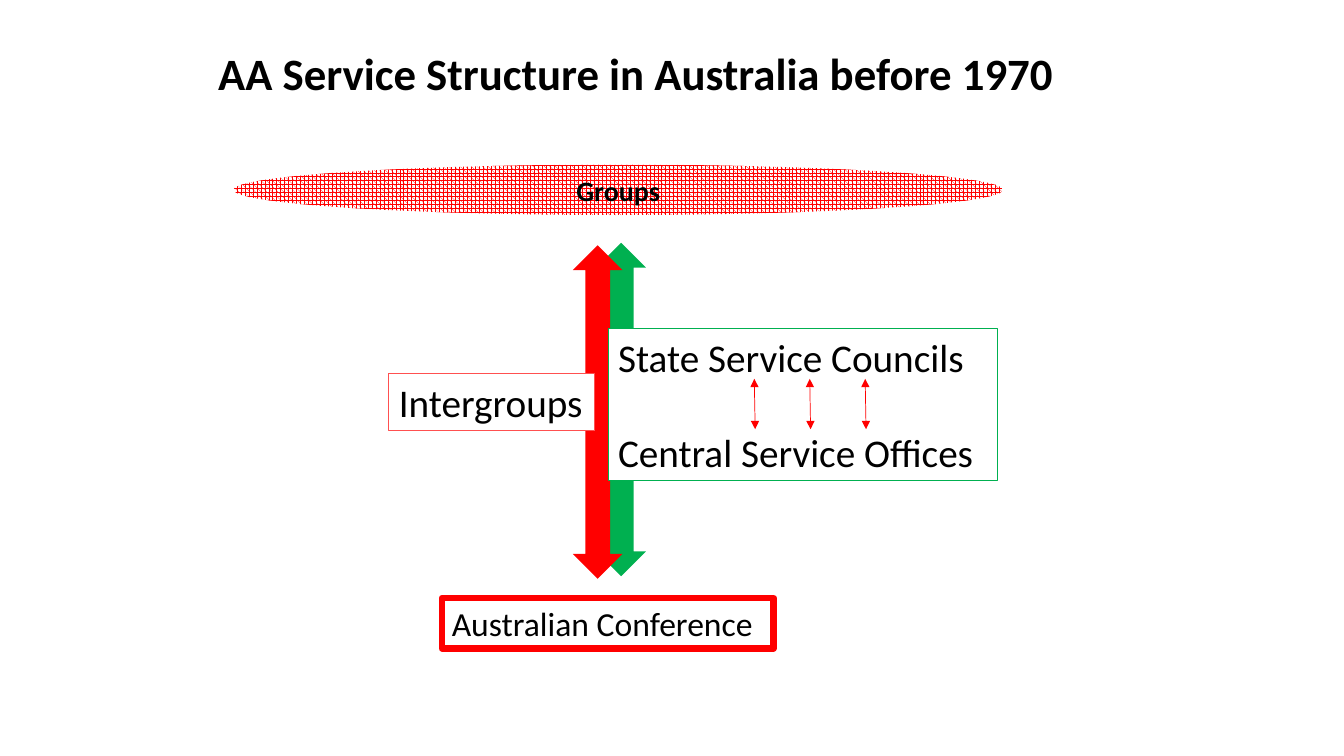
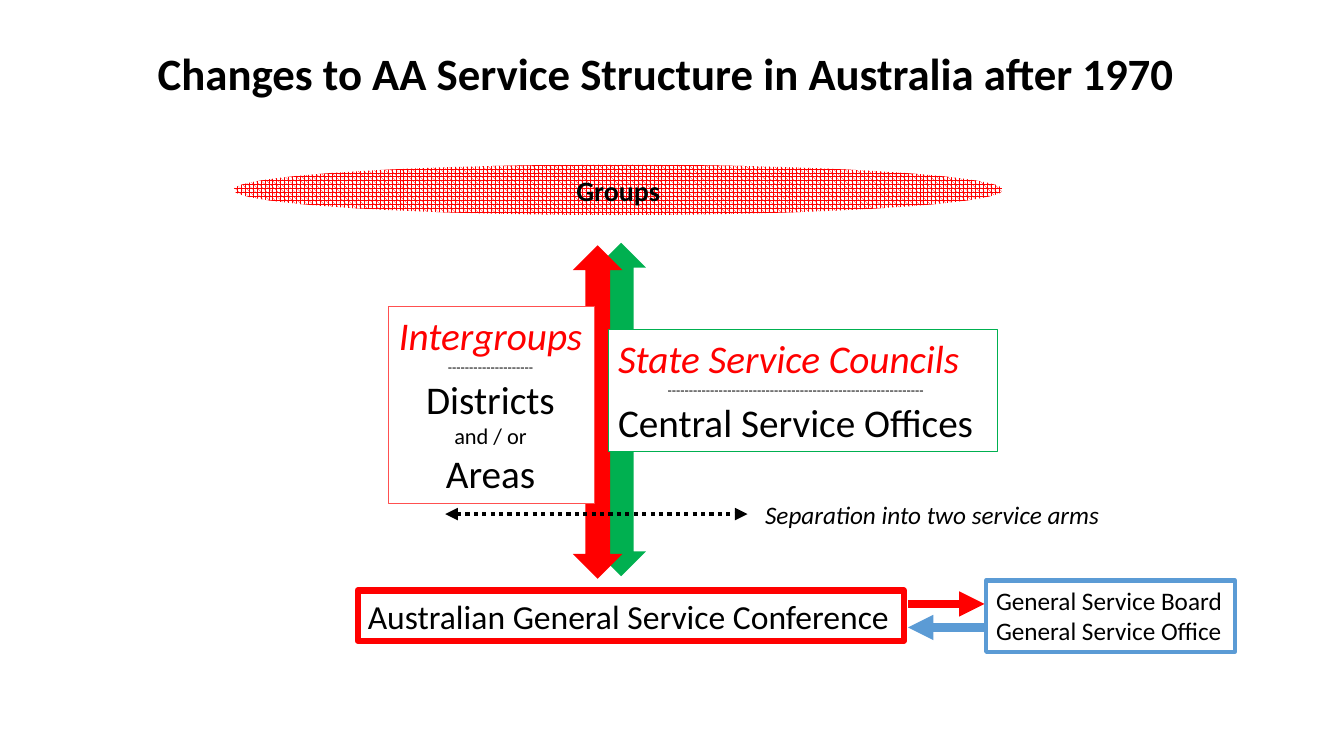
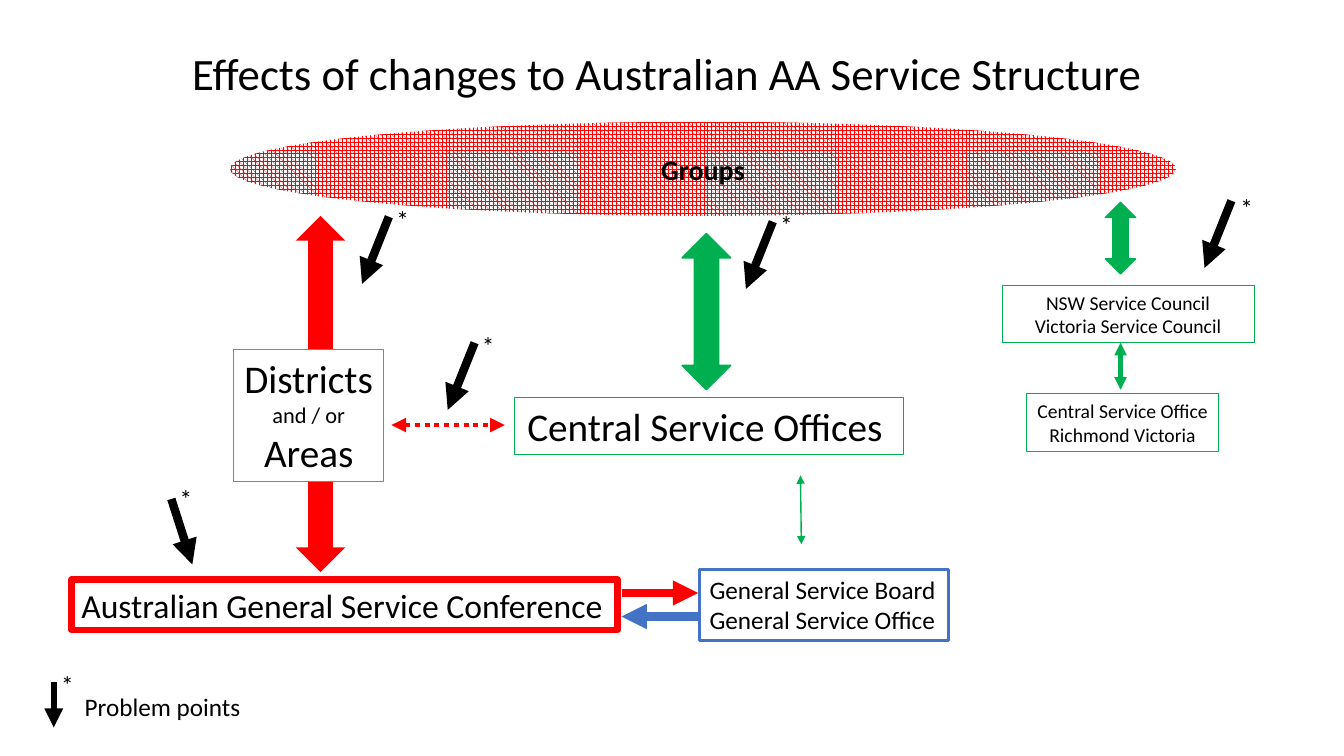
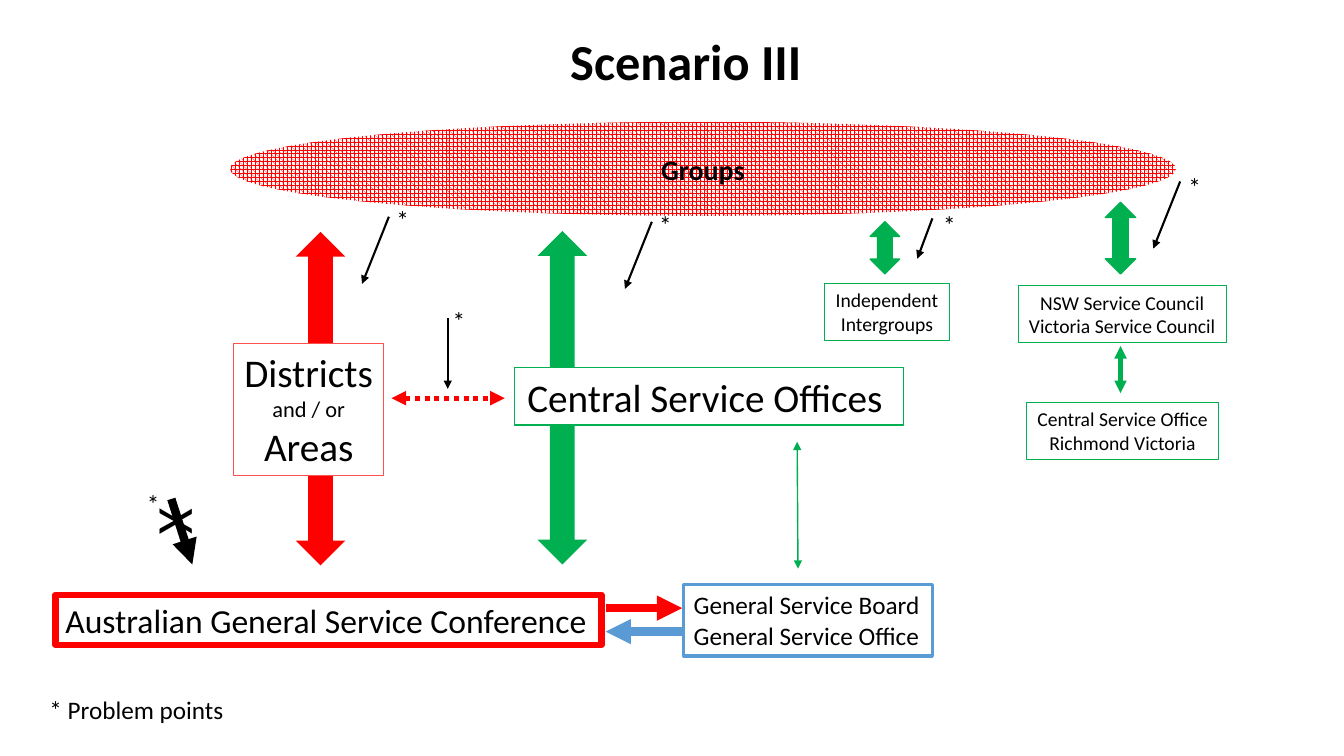
"""Build four slides on the service structure, placed on a grid of 160 columns by 90 rows."""
from dataclasses import dataclass

from lxml import etree
from pptx import Presentation
from pptx import util as u
from pptx.dml import color
from pptx.enum import dml, shapes, text
from pptx.oxml import ns


@dataclass(frozen=True)
class Theme:
    font: str = "Calibri"
    black: str = "000000"
    white: str = "FFFFFF"
    red: str = "FF0000"
    coral: str = "FF5050"
    green: str = "00B050"
    sky: str = "5B9BD5"
    blue: str = "4472C4"
    display: int = 36
    title: int = 32
    body: int = 28
    conference: int = 24
    groups: int = 20
    note: int = 18
    joiner: int = 16
    small: int = 14
    rule: int = 10
    hairline: float = 0.75
    heavy: float = 4.5
    thick: float = 6


THEME = Theme()
WIDTH, HEIGHT = u.Inches(13.33), u.Inches(7.5)
COLUMNS, ROWS = 160, 90
CENTER = text.PP_ALIGN.CENTER
TITLE_TOP, TITLE_HEIGHT = 4.8, 7.7
TALL_ARROW = (5.9, 39.7)
LINE_HEIGHT, PAIR_HEIGHT = 4.8, 6.8
CONFERENCE = "Australian General Service Conference"
OFFICES = "Central Service Offices"
DISTRICTS = ["Districts", ("and / or", {"size": THEME.joiner}), "Areas"]


def rgb(value):
    return color.RGBColor.from_string(value)


def col(value):
    return round(WIDTH * value / COLUMNS)


def row(value):
    return round(HEIGHT * value / ROWS)


def place(left, top, width, height):
    return col(left), row(top), col(width), row(height)


def write(frame, lines, **style):
    for index, line in enumerate(lines):
        words, changes = (line, {}) if isinstance(line, str) else line
        look = {"size": THEME.note, "ink": THEME.black, **style, **changes}
        paragraph = frame.paragraphs[0] if index == 0 else frame.add_paragraph()
        paragraph.alignment = look.get("align", text.PP_ALIGN.LEFT)
        paragraph.space_before = u.Pt(look.get("before", 0))
        run = paragraph.add_run()
        run.text = words
        run.font.name = THEME.font
        run.font.size = u.Pt(look["size"])
        run.font.bold = look.get("bold", False)
        run.font.italic = look.get("italic", False)
        run.font.color.rgb = rgb(look["ink"])


def fit(frame, wrap=False):
    frame.word_wrap = wrap
    frame.auto_size = text.MSO_AUTO_SIZE.SHAPE_TO_FIT_TEXT
    frame.vertical_anchor = text.MSO_ANCHOR.TOP


def label(slide, at, words, turn=0, **style):
    note = slide.shapes.add_textbox(*place(*at))
    note.rotation = turn
    fit(note.text_frame)
    write(note.text_frame, [words], **style)


def title(slide, left, width, words, top=TITLE_TOP, height=TITLE_HEIGHT, **style):
    label(slide, (left, top, width, height), words, **{"size": THEME.title, **style})


def figure(slide, kind, at, fill=None, edge=None, weight=THEME.hairline):
    part = slide.shapes.add_shape(kind, *place(*at))
    part.shadow.inherit = False
    if fill:
        part.fill.solid()
        part.fill.fore_color.rgb = rgb(fill)
    else:
        part.fill.background()
    if edge:
        part.line.color.rgb = rgb(edge)
        part.line.width = u.Pt(weight)
    else:
        part.line.fill.background()
    return part


def box(slide, at, lines, edge, weight=THEME.hairline, fill=None, wrap=False, **style):
    panel = figure(slide, shapes.MSO_SHAPE.RECTANGLE, at, fill, edge, weight)
    fit(panel.text_frame, wrap)
    write(panel.text_frame, lines, **style)


def block_arrow(slide, at, fill, edge=None):
    figure(slide, shapes.MSO_SHAPE.UP_DOWN_ARROW, at, fill, edge, 1)


def arrow(slide, start, end, ink, weight, both=False, dotted=False):
    link = slide.shapes.add_connector(
        shapes.MSO_CONNECTOR.STRAIGHT, col(start[0]), row(start[1]), col(end[0]), row(end[1]))
    link.line.color.rgb = rgb(ink)
    link.line.width = u.Pt(weight)
    if dotted:
        link.line.dash_style = dml.MSO_LINE.ROUND_DOT
    properties = link.element.spPr
    stroke = properties.find(ns.qn("a:ln"))
    for tip in ("a:headEnd", "a:tailEnd") if both else ("a:tailEnd",):
        etree.SubElement(stroke, ns.qn(tip), type="triangle")
    etree.SubElement(properties, ns.qn("a:effectLst"))


def groups(slide, at):
    oval = figure(slide, shapes.MSO_SHAPE.OVAL, at)
    oval.fill.patterned()
    oval.fill.pattern = dml.MSO_PATTERN.SPHERE
    oval.fill.fore_color.rgb = rgb(THEME.red)
    oval.fill.back_color.rgb = rgb(THEME.white)
    oval.text_frame.vertical_anchor = text.MSO_ANCHOR.MIDDLE
    write(oval.text_frame, ["Groups"], size=THEME.groups, bold=True, align=CENTER)


def conference(slide, left, top, width=65, words=CONFERENCE):
    box(slide, (left, top, width, 6), [words], THEME.red, THEME.heavy, size=THEME.conference)


def conference_with_board(slide, left, top, ink, weight):
    conference(slide, left, top)
    box(slide, (left + 74.8, top - 1.2, 29.6, 8.5),
        ["General Service Board", "General Service Office"], ink, weight)
    near, far = left + 65.5, left + 74.6
    arrow(slide, (near, top + 1.6), (far, top + 1.6), THEME.red, THEME.thick)
    arrow(slide, (far, top + 4.4), (near, top + 4.4), ink, THEME.thick)


def problem(slide, start, reach=(-3.2, 8), weight=THEME.thick, star=(-0.3, -2.1)):
    x, y = start
    arrow(slide, start, (x + reach[0], y + reach[1]), THEME.black, weight)
    label(slide, (x + star[0], y + star[1], 4, LINE_HEIGHT), "*")


def small_box(slide, at, lines, **options):
    box(slide, (*at, PAIR_HEIGHT), lines, THEME.green, size=THEME.small, align=CENTER, **options)


def twin_arms(slide):
    block_arrow(slide, (71, 28.9, *TALL_ARROW), THEME.green)
    block_arrow(slide, (68.2, 29.2, *TALL_ARROW), THEME.red)
    groups(slide, (27.8, 19.6, 91.6, 6))


def separated_arms(slide, districts_top, offices_top, link_row):
    groups(slide, (27.4, 14.5, 112.6, 11.2))
    box(slide, (61.3, offices_top, 46.3, PAIR_HEIGHT), [OFFICES + " "], THEME.green,
        fill=THEME.white, size=THEME.body, align=CENTER)
    box(slide, (27.8, districts_top, 17.9, 15.7), DISTRICTS, THEME.coral,
        fill=THEME.white, size=THEME.body, align=CENTER)
    arrow(slide, (46.6, link_row), (60.1, link_row), THEME.red, 3.5, both=True, dotted=True)


def state_branch(slide, council_left, council_width, link_top, office_top, wrap=False):
    block_arrow(slide, (131.6, 24.1, 3.6, 8.5), THEME.green, THEME.green)
    small_box(slide, (council_left, 34, council_width),
              ["NSW Service Council", "Victoria Service Council"], wrap=wrap)
    arrow(slide, (133.4, link_top), (133.4, link_top + 5.6), THEME.green, 3, both=True)
    small_box(slide, (122.2, office_top, 22.9),
              ["Central Service Office", "Richmond Victoria"], fill=THEME.white)


def before_1970(slide):
    twin_arms(slide)
    box(slide, (72.4, 39.1, 46.3, 18.1),
        ["State Service Councils", (OFFICES, {"before": 34})],
        THEME.green, fill=THEME.white, size=THEME.body)
    for index in range(3):
        x = 89.8 + 6.6 * index
        arrow(slide, (x, 45.1), (x + 0.1, 51.1), THEME.red, 0.5, both=True)
    conference(slide, 52.6, 71.2, 39.5, "Australian Conference")
    title(slide, 24.8, 103.3, "AA Service Structure in Australia before 1970", bold=True)
    box(slide, (46.3, 44.5, 24.5, PAIR_HEIGHT), ["Intergroups"], THEME.coral,
        fill=THEME.white, size=THEME.body)


def after_1970(slide):
    former = {"ink": THEME.red, "italic": True, "align": text.PP_ALIGN.LEFT}
    divider = {"size": THEME.rule, "align": CENTER}
    twin_arms(slide)
    box(slide, (72.4, 39.2, 46.3, 14.5),
        [("State Service Councils", former), ("-" * 60, divider), OFFICES],
        THEME.green, fill=THEME.white, size=THEME.body)
    title(slide, 17.6, 124.7, "Changes to AA Service Structure in Australia after 1970", bold=True)
    box(slide, (46.3, 36.5, 24.5, 23.4),
        [("Intergroups", former), ("-" * 20, divider), *DISTRICTS],
        THEME.coral, fill=THEME.white, size=THEME.body, align=CENTER)
    conference_with_board(slide, 42.6, 70.3, THEME.sky, 3)
    arrow(slide, (53, 61.2), (89, 61.2), THEME.black, 3, both=True, dotted=True)
    label(slide, (89.9, 58.8, 42.8, LINE_HEIGHT), "Separation into two service arms", italic=True)


def effects(slide):
    block_arrow(slide, (35.2, 25.7, 5.9, 42.4), THEME.red)
    separated_arms(slide, 41.6, 47.3, 50.6)
    title(slide, 21.7, 116.6, "Effects of changes to Australian AA Service Structure")
    conference_with_board(slide, 8.5, 69, THEME.blue, 2.25)
    state_branch(slide, 119.3, 30, 40.8, 46.9, wrap=True)
    block_arrow(slide, (81.2, 27.8, 5.8, 18.6), THEME.green, THEME.green)
    arrow(slide, (95.3, 56.6), (95.4, 64.8), THEME.green, 1, both=True)
    for start in ((56.5, 40.8), (46.3, 25.8), (92, 26.4)):
        problem(slide, start)
    problem(slide, (146.6, 23.9), star=(-0.1, -1.6))
    problem(slide, (20.4, 59.4), reach=(2.5, 7.8), star=(-0.2, -2.5))
    problem(slide, (6.4, 81.2), reach=(0, 5.4), weight=THEME.heavy)
    label(slide, (8.9, 81.7, 21.1, LINE_HEIGHT), "Problem points")


def scenario(slide):
    thin = 1.5
    block_arrow(slide, (64, 27.5, *TALL_ARROW), THEME.green)
    block_arrow(slide, (35.2, 27.6, *TALL_ARROW), THEME.red)
    separated_arms(slide, 40.9, 43.8, 47.4)
    title(slide, 66.7, 30.2, "Scenario III", top=3, height=8.5, size=THEME.display, bold=True)
    conference_with_board(slide, 6.6, 70.8, THEME.sky, 2.25)
    state_branch(slide, 121.2, 24.8, 41.2, 47.9)
    arrow(slide, (94.9, 52.6), (95, 67.7), THEME.green, 1, both=True)
    block_arrow(slide, (103.6, 26.4, 3.5, 6.2), THEME.green, THEME.green)
    small_box(slide, (98.2, 33.7, 14.8), ["Independent", "Intergroups"])
    problem(slide, (20.4, 59.4), reach=(2.5, 7.8), star=(-4.1, -1.9))
    label(slide, (18.6, 57.8, 5.5, 8.5), "X", turn=90, size=THEME.display)
    for start in ((46.3, 25.8), (77.6, 26.4)):
        problem(slide, start, weight=thin)
    problem(slide, (140.5, 21.6), weight=thin, star=(-0.2, -1.8))
    problem(slide, (111, 26), reach=(-1.8, 4.8), weight=thin, star=(0.1, -1.7))
    problem(slide, (53.3, 37.9), reach=(0, 8.4), weight=thin, star=(-0.6, -2.1))
    label(slide, (4.7, 82.1, 23.4, LINE_HEIGHT), "* Problem points")


def main():
    deck = Presentation()
    deck.slide_width, deck.slide_height = WIDTH, HEIGHT
    for build in (before_1970, after_1970, effects, scenario):
        build(deck.slides.add_slide(deck.slide_layouts[6]))
    deck.save("out.pptx")


if __name__ == "__main__":
    main()
